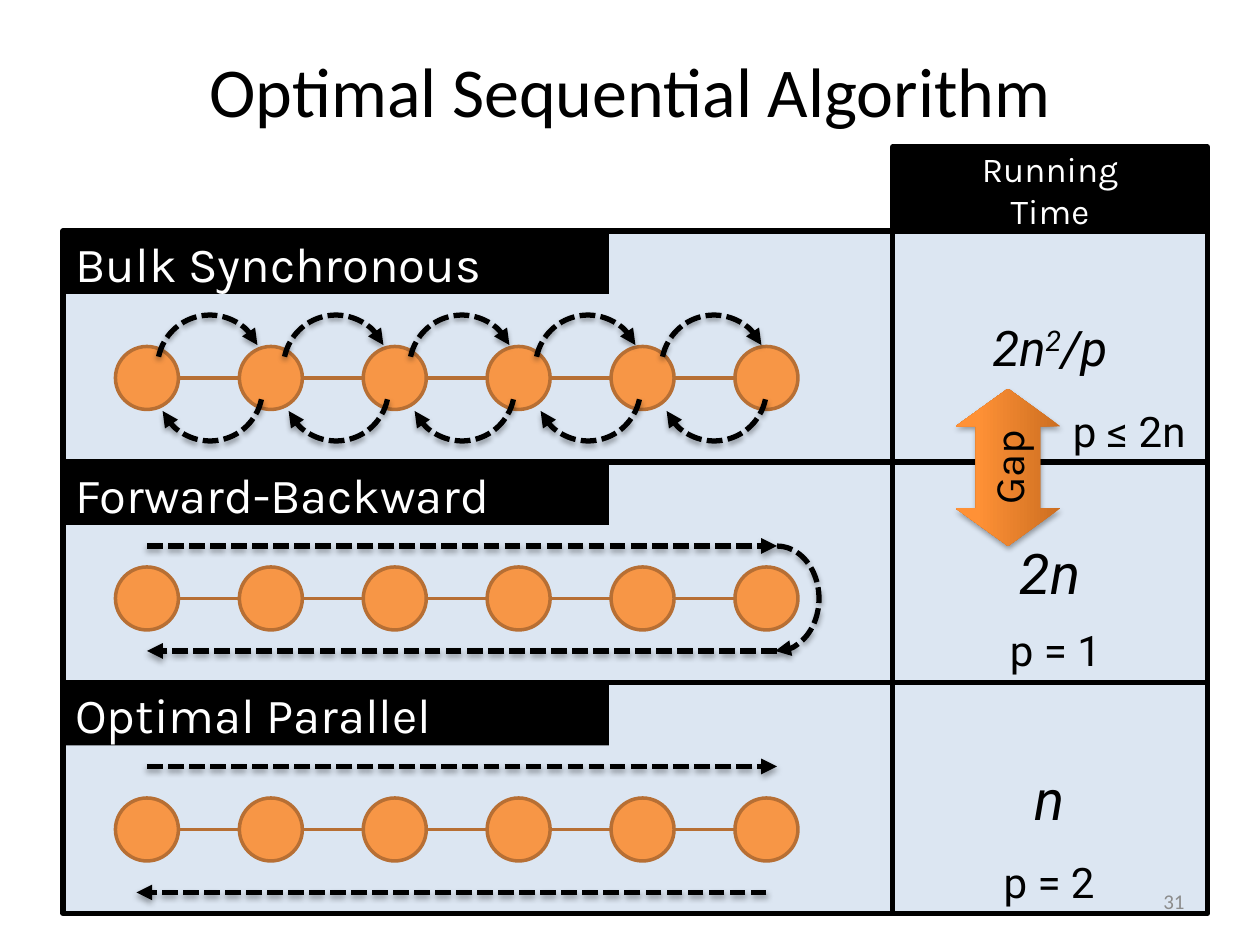
from dataclasses import dataclass

from lxml.etree import SubElement
from pptx import Presentation
from pptx.dml.color import RGBColor
from pptx.enum.dml import MSO_LINE
from pptx.enum.shapes import MSO_CONNECTOR as Link, MSO_SHAPE as Kind
from pptx.enum.text import MSO_ANCHOR as Anchor, PP_ALIGN as Align
from pptx.oxml.ns import qn
from pptx.util import Pt

SCALE = 7620


@dataclass(frozen=True)
class Theme:
    """Colours, fonts, type sizes and line widths of the slide."""
    black: str = "000000"
    white: str = "FFFFFF"
    grey: str = "8C8C8C"
    panel: str = "DCE6F2"
    node: str = "F79646"
    node_edge: str = "B76F34"
    gap_dark: str = "CC6E20"
    gap_light: str = "FF9136"
    title_font: str = "Calibri"
    label_font: str = "Karla"
    math_font: str = "Roboto"
    title: int = 40
    big: int = 32
    label: int = 28
    note: int = 24
    header: int = 20
    number: int = 12
    border: int = 3
    edge: int = 2


THEME = Theme()


def px(*lengths):
    """Turn px lengths into EMU."""
    return [length * SCALE for length in lengths]


def rgb(color):
    """Turn a hex string into a colour."""
    return RGBColor.from_string(color)


def write(shape, text, font, size, color=THEME.black, align=Align.LEFT,
          anchor=Anchor.MIDDLE, italic=False, wrap=False):
    """Write lines of text, with superscripts held between carets."""
    frame = shape.text_frame
    frame.word_wrap = wrap
    frame.vertical_anchor = anchor
    for index, line in enumerate(text.split("\n")):
        para = frame.add_paragraph() if index else frame.paragraphs[0]
        para.alignment = align
        for order, part in enumerate(line.split("^")):
            span = para.add_run()
            span.text = part
            span.font.name = font
            span.font.size = Pt(size)
            span.font.italic = italic
            span.font.color.rgb = rgb(color)
            if order % 2:
                span.font._element.set("baseline", "30000")


def add_note(page, box, text, font=THEME.math_font, size=THEME.note, **style):
    """Add a text box."""
    note = page.shapes.add_textbox(*px(*box))
    write(note, text, font, size, **style)
    return note


def add_box(page, kind, box, fill=None, line=None, width=THEME.border):
    """Add a preset shape without a shadow."""
    shape = page.shapes.add_shape(kind, *px(*box))
    if fill:
        shape.fill.solid()
        shape.fill.fore_color.rgb = rgb(fill)
    else:
        shape.fill.background()
    if line:
        shape.line.color.rgb = rgb(line)
        shape.line.width = Pt(width)
    else:
        shape.line.fill.background()
    shape.shadow.inherit = False
    return shape


def add_line(page, start, end, color, width):
    """Add a straight connector without a shadow."""
    line = page.shapes.add_connector(Link.STRAIGHT, *px(*start, *end))
    line.line.color.rgb = rgb(color)
    line.line.width = Pt(width)
    SubElement(line._element.spPr, qn("a:effectLst"))
    return line


def add_shadow(shape):
    """Give a shape a soft shadow below it."""
    effects = shape._element.spPr.find(qn("a:effectLst"))
    shadow = SubElement(effects, qn("a:outerShdw"), blurRad="40000",
                        dist="23000", dir="5400000", rotWithShape="0")
    color = SubElement(shadow, qn("a:srgbClr"), val=THEME.black)
    SubElement(color, qn("a:alpha"), val="35000")


def make_dashed_arrow(shape):
    """Dash a line, point its end and shade it."""
    shape.line.dash_style = MSO_LINE.SQUARE_DOT
    SubElement(shape.line._get_or_add_ln(), qn("a:tailEnd"), type="triangle")
    add_shadow(shape)


def add_arrow(page, start, end):
    """Add a straight dashed arrow."""
    make_dashed_arrow(add_line(page, start, end, THEME.black, THEME.border))


def add_arc(page, box, angles, rotation=0):
    """Add a dashed arc arrow."""
    arc = add_box(page, Kind.ARC, box, line=THEME.black)
    arc.adjustments[0], arc.adjustments[1] = angles
    arc.rotation = rotation
    make_dashed_arrow(arc)


def add_chain(page, left, top, count=6, size=60, pitch=118):
    """Add a row of linked nodes."""
    middle = top + size // 2
    add_line(page, (left + size, middle), (left + (count - 1) * pitch, middle),
             THEME.node_edge, THEME.edge)
    for index in range(count):
        add_box(page, Kind.OVAL, (left + index * pitch, top, size, size),
                THEME.node, THEME.node_edge, THEME.edge)


def add_panel(page, box, label, chain_drop):
    """Add a schedule panel with its label and chain."""
    left, top, _, _ = box
    add_box(page, Kind.RECTANGLE, box, THEME.panel, THEME.black)
    tag = add_box(page, Kind.RECTANGLE, (left, top, 520, 60), THEME.black)
    write(tag, label, THEME.label_font, THEME.label, color=THEME.white)
    add_chain(page, left + 50, top + chain_drop)


def add_bulk_arrows(page, left, top):
    """Add arcs to and fro between neighbouring nodes."""
    for drop, rotation in ((80, 270), (100, 90)):
        for index in range(5):
            add_arc(page, (left + 90 + index * 120, top + drop, 100, 100),
                    (169.17, 38.75), rotation)


def add_forward_arrows(page, left, top):
    """Add a forward sweep that turns into a backward sweep."""
    add_arrow(page, (left + 80, top + 80), (left + 680, top + 80))
    add_arc(page, (left + 640, top + 80, 80, 100), (162, 55.15))
    add_arrow(page, (left + 680, top + 180), (left + 80, top + 180))


def add_parallel_arrows(page, left, top):
    """Add two independent sweeps."""
    add_arrow(page, (left + 80, top + 80), (left + 680, top + 80))
    add_arrow(page, (left + 670, top + 200), (left + 70, top + 200))


def add_time_cell(page, box, formula, size, note, note_box):
    """Add a running time with its processor count."""
    left, top, _, _ = box
    cell = add_box(page, Kind.RECTANGLE, box, THEME.panel, THEME.black)
    write(cell, formula, THEME.math_font, size, align=Align.CENTER, italic=True)
    right, drop, width, height = note_box
    add_note(page, (left + right, top + drop, width, height), note,
             anchor=Anchor.TOP)


def add_time_header(page, box):
    """Add the heading of the running time column."""
    header = add_box(page, Kind.RECTANGLE, box, THEME.black, THEME.black)
    write(header, "Running\nTime", THEME.label_font, THEME.header,
          color=THEME.white, align=Align.CENTER)


def add_gap(page, box):
    """Add the upright double arrow that marks the gap."""
    gap = add_box(page, Kind.LEFT_RIGHT_ARROW, box)
    gap.adjustments[0], gap.adjustments[1] = 0.61, 0.36
    gap.rotation = 270
    gap.fill.gradient()
    gap.fill.gradient_angle = 90
    stops = ((0, THEME.gap_dark), (0.8, THEME.gap_light))
    for stop, (position, color) in zip(gap.fill.gradient_stops, stops):
        stop.position = position
        stop.color.rgb = rgb(color)
    add_shadow(gap)
    write(gap, "Gap", THEME.label_font, THEME.note, align=Align.CENTER)


def add_title(page, box, text):
    """Place and fill the title."""
    title = page.shapes.title
    title.left, title.top, title.width, title.height = px(*box)
    write(title, text, THEME.title_font, THEME.title, align=Align.CENTER, wrap=True)


def main():
    """Build the deck."""
    deck = Presentation()
    deck.slide_width, deck.slide_height = px(1200, 900)
    page = deck.slides.add_slide(deck.slide_layouts[5])
    add_title(page, (60, 10, 1080, 150), "Optimal Sequential Algorithm")
    rows = (
        (220, "Bulk Synchronous", 110, add_bulk_arrows,
         "2n^2^/p", THEME.label, "p ≤ 2n", (160, 160, 138, 60)),
        (210, "Forward-Backward", 100, add_forward_arrows,
         "2n", THEME.big, "p = 1", (100, 149, 115, 60)),
        (220, "Optimal Parallel", 110, add_parallel_arrows,
         "n", THEME.big, "p = 2", (94, 160, 115, 60)),
    )
    left, top, width = 60, 220, 790
    add_time_header(page, (left + width, top - 80, 300, 80))
    for height, label, drop, add_arrows, *time in rows:
        add_panel(page, (left, top, width, height), label, drop)
        add_arrows(page, left, top)
        add_time_cell(page, (left + width, top, 300, height), *time)
        top += height
    add_gap(page, (885, 395, 150, 100))
    add_note(page, (860, 834, 280, 48), "31", THEME.title_font, THEME.number,
             color=THEME.grey, align=Align.RIGHT, wrap=True)
    deck.save("out.pptx")


if __name__ == "__main__":
    main()
